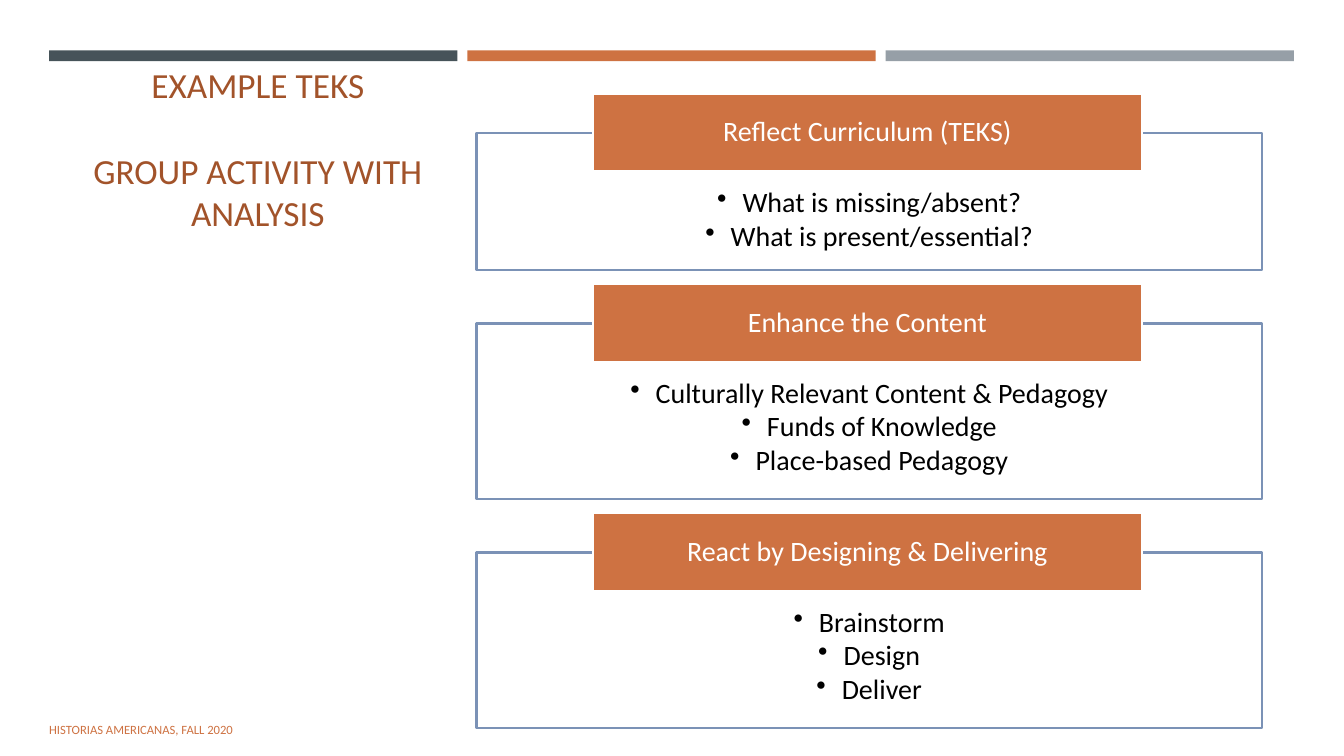
from lxml import etree
from pptx import Presentation
from pptx.dml.color import RGBColor
from pptx.enum.shapes import MSO_SHAPE
from pptx.enum.text import MSO_ANCHOR, PP_ALIGN
from pptx.oxml.ns import qn
from pptx.util import Cm, Pt

RECTANGLE = MSO_SHAPE.RECTANGLE
TOP, MIDDLE, BOTTOM = MSO_ANCHOR.TOP, MSO_ANCHOR.MIDDLE, MSO_ANCHOR.BOTTOM
LEFT, CENTER = PP_ALIGN.LEFT, PP_ALIGN.CENTER

WHITE = RGBColor(0xFF, 0xFF, 0xFF)
BLACK = RGBColor(0x00, 0x00, 0x00)
SLATE = RGBColor(0x46, 0x53, 0x59)
ORANGE = RGBColor(0xCE, 0x72, 0x42)
GRAY = RGBColor(0x96, 0x9F, 0xA7)
RUST = RGBColor(0xA2, 0x53, 0x2A)
BLUE = RGBColor(0x7B, 0x92, 0xB6)

BAR_LEFT, BAR_WIDTH, BAR_STEP = 1.24, 10.29, 10.54
PANEL_TOP, PANEL_GAP = 3.35, 1.35
HEADER_RISE = 0.99
STEPS = [
    ("Reflect Curriculum (TEKS)", 3.45,
     ["What is missing/absent?", "What is present/essential?"]),
    ("Enhance the Content", 4.42,
     ["Culturally Relevant Content & Pedagogy", "Funds of Knowledge",
      "Place-based Pedagogy"]),
    ("React by Designing & Delivering", 4.42,
     ["Brainstorm", "Design", "Deliver"]),
]


class SlideBuilder:
    """Holds the font and the current slide; lengths are in centimetres."""

    font_name = "Calibri"

    def __init__(self, slide):
        self.slide = slide

    def rectangle(self, left, top, width, height, fill, line=None):
        shape = self.slide.shapes.add_shape(
            RECTANGLE, Cm(left), Cm(top), Cm(width), Cm(height))
        shape.shadow.inherit = False
        shape.fill.solid()
        shape.fill.fore_color.rgb = fill
        if line is None:
            shape.line.fill.background()
        else:
            shape.line.color.rgb = line
            shape.line.width = Pt(1.75)
        return shape

    def text_box(self, left, top, width, height):
        return self.slide.shapes.add_textbox(
            Cm(left), Cm(top), Cm(width), Cm(height))

    def set_text(self, shape, lines, size, color, align=CENTER, anchor=MIDDLE,
                 insets=(0.25, 0.13, 0.25, 0.13), line_spacing=1.0):
        frame = shape.text_frame
        frame.word_wrap = True
        frame.vertical_anchor = anchor
        (frame.margin_left, frame.margin_top,
         frame.margin_right, frame.margin_bottom) = map(Cm, insets)
        frame.text = "\n".join(lines)
        for paragraph in frame.paragraphs:
            paragraph.alignment = align
            paragraph.line_spacing = line_spacing
            for run in paragraph.runs:
                run.font.name = self.font_name
                run.font.size = Pt(size)
                run.font.color.rgb = color
        return frame

    def bullet(self, paragraph):
        paragraph.level = 1
        paragraph.space_after = Pt(2.5)
        properties = paragraph._p.get_or_add_pPr()
        properties.set("marL", str(Cm(0.64)))
        properties.set("indent", str(-Cm(0.64)))
        etree.SubElement(properties, qn("a:buChar"), char="•")

    def panel(self, top, height, items):
        shape = self.rectangle(12.01, top, 19.79, height, WHITE, BLUE)
        frame = self.set_text(shape, items, 20, BLACK, anchor=TOP,
                              insets=(1.52, 1.4, 1.52, 0.41), line_spacing=0.9)
        for paragraph in frame.paragraphs:
            self.bullet(paragraph)

    def header(self, top, heading):
        shape = self.rectangle(14.94, top, 13.84, 1.96, ORANGE, WHITE)
        self.set_text(shape, [heading], 20, WHITE,
                      insets=(0.53, 0, 0.53, 0), line_spacing=0.9)


def main():
    presentation = Presentation()
    presentation.slide_width = Cm(33.87)
    presentation.slide_height = Cm(19.05)
    slide = presentation.slides.add_slide(presentation.slide_layouts[6])
    builder = SlideBuilder(slide)

    # Coloured bars along the top
    for index, color in enumerate([SLATE, ORANGE, GRAY]):
        builder.rectangle(BAR_LEFT + index * BAR_STEP, 1.27, BAR_WIDTH, 0.27, color)

    # Title
    title = builder.text_box(1.37, 1.57, 10.26, 4.45)
    frame = builder.set_text(title, ["EXAMPLE TEKS", "GROUP ACTIVITY WITH ANALYSIS"],
                             25.2, RUST, anchor=BOTTOM)
    frame.paragraphs[1].space_before = Pt(30.75)

    # Three steps, each a bulleted panel with an overlapping header
    top = PANEL_TOP
    for heading, height, items in STEPS:
        builder.panel(top, height, items)
        builder.header(top - HEADER_RISE, heading)
        top += height + PANEL_GAP

    # Footer
    footer = builder.text_box(0.99, 17.86, 18.95, 1.02)
    builder.set_text(footer, ["HISTORIAS AMERICANAS, FALL 2020"], 9, ORANGE, align=LEFT)

    presentation.save("out.pptx")


if __name__ == "__main__":
    main()
